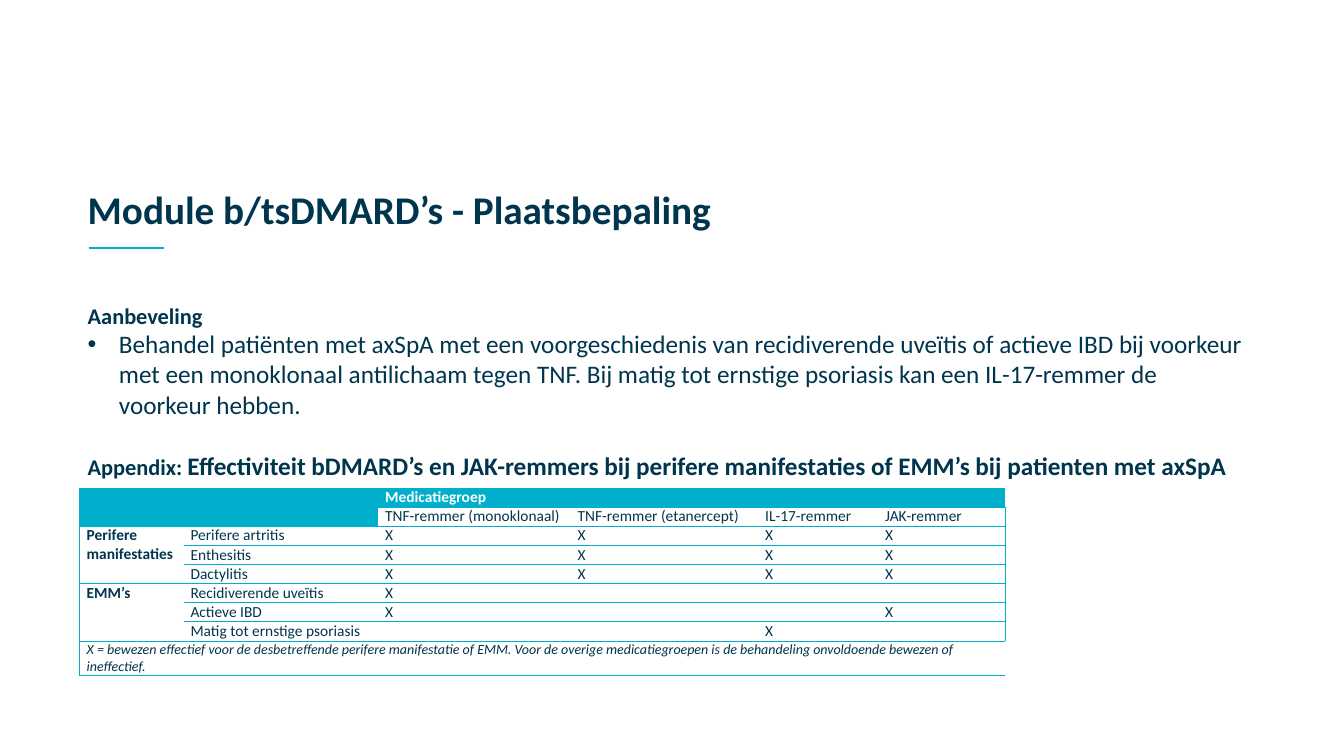
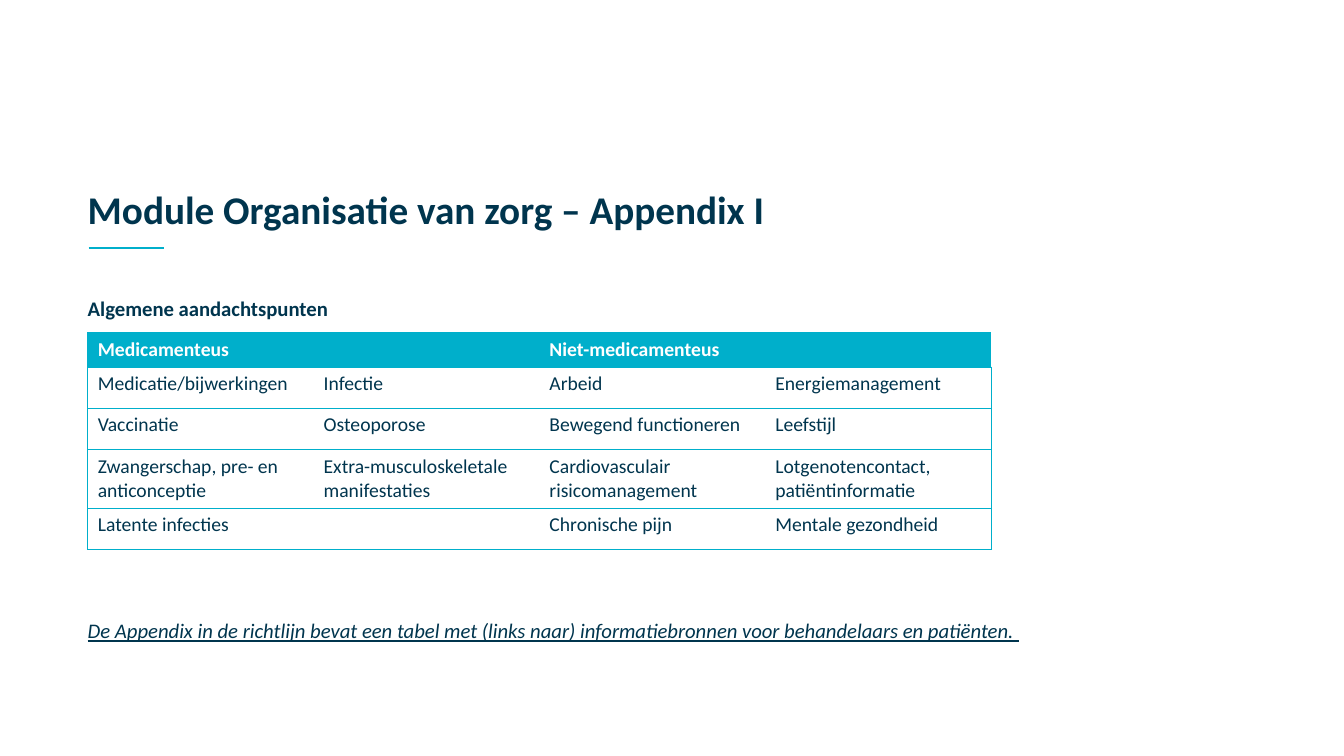
from dataclasses import dataclass, replace
from typing import Callable

from lxml.etree import SubElement
from pptx import Presentation
from pptx.dml.color import RGBColor
from pptx.enum.shapes import MSO_CONNECTOR as Connector
from pptx.enum.text import MSO_ANCHOR as Anchor, MSO_AUTO_SIZE as AutoSize, PP_ALIGN as Align
from pptx.oxml.ns import qn
from pptx.util import Emu, Pt

EMU_PER_PX = 9144
NAVY, TEAL, WHITE = "00354E", "00AFCB", "FFFFFF"
FONT = "Calibri"
PLAIN_TABLE = "{2D5ABB26-0587-4C30-8999-92F81FD0307C}"
BULLET_INDENT = 31


def px(length: int) -> Emu:
    return Emu(length * EMU_PER_PX)


def color(code: str) -> RGBColor:
    return RGBColor.from_string(code)


@dataclass(frozen=True)
class Ink:
    size: float
    code: str = NAVY
    bold: bool = False
    italic: bool = False
    underline: bool = False
    align: Align = Align.LEFT


@dataclass(frozen=True)
class Line:
    pieces: list[tuple[str, Ink]]
    spacing: float = 1.0
    before: int = 0
    bullet: bool = False


@dataclass(frozen=True)
class Grid:
    left: int
    top: int
    columns: list[int]
    heights: list[int]
    rows: list[list[str]]
    merges: list[tuple[int, int, int, int]]
    filled: list[tuple[int, int]]
    ink: Callable[[int, int], Ink]
    margins: tuple[int, int]


@dataclass(frozen=True)
class Page:
    title: str
    lines: list[Line]
    grid: Grid


def format_run(run, ink: Ink) -> None:
    font = run.font
    font.name, font.size = FONT, Pt(ink.size)
    font.bold, font.italic, font.underline = ink.bold, ink.italic, ink.underline
    font.color.rgb = color(ink.code)


def write_line(paragraph, line: Line) -> None:
    properties = paragraph._p.get_or_add_pPr()
    indent = px(BULLET_INDENT) if line.bullet else 0
    properties.set("marL", str(indent))
    properties.set("indent", str(-indent))
    if line.bullet:
        SubElement(properties, qn("a:buChar")).set("char", "•")
    else:
        SubElement(properties, qn("a:buNone"))
    paragraph.alignment = Align.LEFT
    paragraph.line_spacing = line.spacing
    paragraph.space_before = Pt(line.before)
    for words, ink in line.pieces:
        run = paragraph.add_run()
        run.text = words
        format_run(run, ink)


def write_lines(frame, lines: list[Line]) -> None:
    for index, line in enumerate(lines):
        write_line(frame.add_paragraph() if index else frame.paragraphs[0], line)


def prepare_layout(layout) -> None:
    title, body = layout.placeholders[0], layout.placeholders[1]
    for holder, box, anchor in (
        (title, (77, 133, 1180, 103), Anchor.BOTTOM),
        (body, (77, 281, 1177, 384), Anchor.TOP),
    ):
        holder.left, holder.top, holder.width, holder.height = map(px, box)
        holder.text_frame.vertical_anchor = anchor
        holder.text_frame.auto_size = AutoSize.NONE


def draw_accent(slide) -> None:
    accent = slide.shapes.add_connector(Connector.STRAIGHT, px(88), px(246), px(163), px(246))
    accent.line.color.rgb = color(TEAL)
    accent.line.width = Pt(1.5)
    SubElement(accent._element.spPr, qn("a:effectLst"))


def add_border(cell, side: str) -> None:
    edge = SubElement(cell._tc.get_or_add_tcPr(), qn(f"a:ln{side}"))
    edge.set("w", str(Pt(0.5)))
    SubElement(SubElement(edge, qn("a:solidFill")), qn("a:srgbClr")).set("val", TEAL)


def write_cell(cell, words: str, ink: Ink) -> None:
    cell.text_frame.text = words
    paragraph = cell.text_frame.paragraphs[0]
    paragraph.alignment = ink.align
    for run in paragraph.runs:
        format_run(run, ink)
    if not words:
        SubElement(paragraph._p, qn("a:endParaRPr")).set("sz", str(int(ink.size * 100)))


def draw_grid(slide, grid: Grid) -> None:
    last_row, last_column = len(grid.heights) - 1, len(grid.columns) - 1
    frame = slide.shapes.add_table(
        last_row + 1, last_column + 1, px(grid.left), px(grid.top),
        px(sum(grid.columns)), px(sum(grid.heights)))
    table = frame.table
    table.first_row = table.horz_banding = False
    table._tbl.tblPr.find(qn("a:tableStyleId")).text = PLAIN_TABLE
    for column, width in zip(table.columns, grid.columns):
        column.width = px(width)
    for row, height in zip(table.rows, grid.heights):
        row.height = px(height)
    for top, left, bottom, right in grid.merges:
        table.cell(top, left).merge(table.cell(bottom, right))
    side_margin, end_margin = map(px, grid.margins)
    for row, texts in enumerate(grid.rows):
        for column, words in enumerate(texts):
            cell = table.cell(row, column)
            write_cell(cell, words, grid.ink(row, column))
            cell.margin_left = cell.margin_right = side_margin
            cell.margin_top = cell.margin_bottom = end_margin
            for side, wanted in (
                ("L", column == 0),
                ("R", column == last_column),
                ("T", not cell.is_spanned),
                ("B", not cell.is_spanned or row == last_row),
            ):
                if wanted:
                    add_border(cell, side)
            if (row, column) in grid.filled:
                cell.fill.solid()
                cell.fill.fore_color.rgb = color(TEAL)
            else:
                cell.fill.background()


def draw_page(deck, layout, page: Page) -> None:
    slide = deck.slides.add_slide(layout)
    draw_accent(slide)
    title, body = slide.placeholders[0], slide.placeholders[1]
    write_lines(title.text_frame, [Line([(page.title, Ink(28, bold=True))], spacing=0.9)])
    write_lines(body.text_frame, page.lines)
    draw_grid(slide, page.grid)


def effect_ink(row: int, column: int) -> Ink:
    base = Ink(11, align=Align.JUSTIFY)
    if row == 0:
        return replace(base, code=WHITE, bold=True)
    if row == 8:
        return Ink(10, italic=True)
    return replace(base, bold=column == 0)


def attention_ink(row: int, column: int) -> Ink:
    return Ink(14, code=WHITE, bold=True) if row == 0 else Ink(14)


EFFECTS = Grid(
    left=79, top=484,
    columns=[103, 193, 191, 186, 119, 126],
    heights=[19] * 8 + [34],
    rows=[
        ["", "", "Medicatiegroep", "", "", ""],
        ["", "", "TNF-remmer (monoklonaal)", "TNF-remmer (etanercept)", "IL-17-remmer", "JAK-remmer"],
        ["Perifere manifestaties", "Perifere artritis", "X", "X", "X", "X"],
        ["", "Enthesitis", "X", "X", "X", "X"],
        ["", "Dactylitis", "X", "X", "X", "X"],
        ["EMM’s", "Recidiverende uveïtis", "X", "", "", ""],
        ["", "Actieve IBD", "X", "", "", "X"],
        ["", "Matig tot ernstige psoriasis", "", "", "X", ""],
        ["X = bewezen effectief voor de desbetreffende perifere manifestatie of EMM. Voor de overige "
         "medicatiegroepen is de behandeling onvoldoende bewezen of ineffectief.", "", "", "", "", ""],
    ],
    merges=[(0, 0, 1, 1), (0, 2, 0, 5), (2, 0, 4, 0), (5, 0, 7, 0), (8, 0, 8, 5)],
    filled=[(0, column) for column in range(6)] + [(1, 0), (1, 1)],
    ink=effect_ink,
    margins=(7, 0),
)

ATTENTION_POINTS = Grid(
    left=87, top=330,
    columns=[224] * 4,
    heights=[34, 41, 41, 58, 41],
    rows=[
        ["Medicamenteus", "", "Niet-medicamenteus", ""],
        ["Medicatie/bijwerkingen", "Infectie", "Arbeid", "Energiemanagement"],
        ["Vaccinatie", "Osteoporose", "Bewegend functioneren", "Leefstijl"],
        ["Zwangerschap, pre- en anticonceptie", "Extra-musculoskeletale manifestaties",
         "Cardiovasculair risicomanagement", "Lotgenotencontact, patiëntinformatie"],
        ["Latente infecties", "", "Chronische pijn", "Mentale gezondheid"],
    ],
    merges=[(0, 0, 0, 1), (0, 2, 0, 3)],
    filled=[(0, column) for column in range(4)],
    ink=attention_ink,
    margins=(10, 5),
)

PAGES = [
    Page(
        "Module b/tsDMARD’s - Plaatsbepaling",
        [
            Line([("Aanbeveling", Ink(16, bold=True))], spacing=1.5),
            Line([("Behandel patiënten met axSpA met een voorgeschiedenis van recidiverende uveïtis of "
                   "actieve IBD bij voorkeur met een monoklonaal antilichaam tegen TNF. Bij matig tot "
                   "ernstige psoriasis kan een IL-17-remmer de voorkeur hebben.", Ink(18))], bullet=True),
            Line([("Appendix: ", Ink(16, bold=True)),
                  ("Effectiviteit bDMARD’s en JAK-remmers bij perifere manifestaties of EMM’s bij "
                   "patienten met axSpA", Ink(18, bold=True))], before=22),
        ],
        EFFECTS,
    ),
    Page(
        "Module Organisatie van zorg – Appendix I",
        [
            Line([("Algemene aandachtspunten", Ink(14.8, bold=True))], spacing=1.3),
            Line([("De Appendix in de richtlijn bevat een tabel met (links naar) informatiebronnen voor "
                   "behandelaars en patiënten. ", Ink(14.8, italic=True, underline=True))],
                 spacing=1.3, before=207),
        ],
        ATTENTION_POINTS,
    ),
]


def main() -> None:
    deck = Presentation()
    deck.slide_width, deck.slide_height = px(1333), px(750)
    layout = deck.slide_layouts[1]
    prepare_layout(layout)
    for page in PAGES:
        draw_page(deck, layout, page)
    deck.save("out.pptx")


if __name__ == "__main__":
    main()
